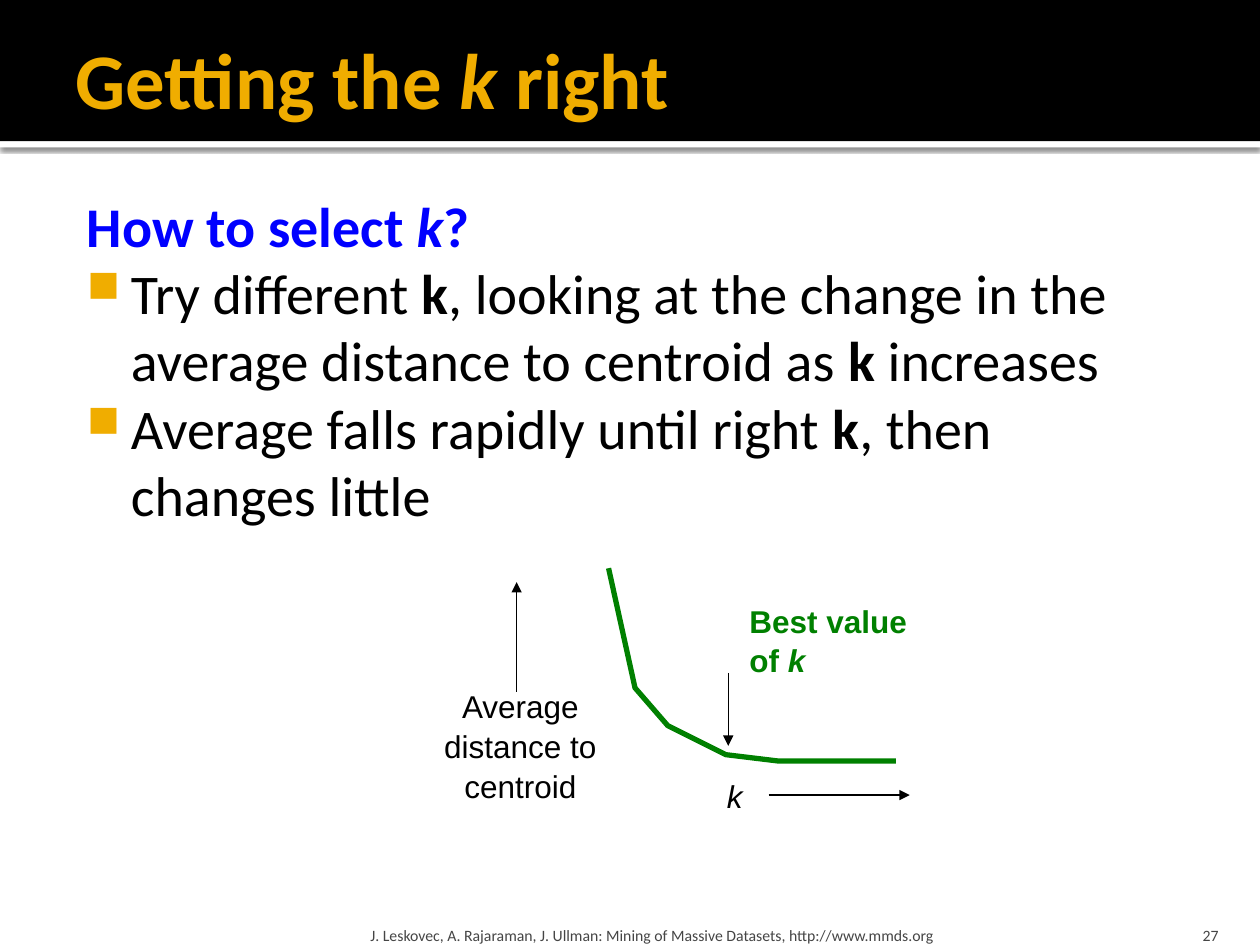
from dataclasses import dataclass

from lxml.etree import SubElement
from pptx import Presentation
from pptx.dml.color import RGBColor
from pptx.enum.shapes import MSO_CONNECTOR as Connector, MSO_SHAPE as Shape
from pptx.enum.text import MSO_ANCHOR as Anchor, MSO_AUTO_SIZE as AutoSize, PP_ALIGN as Align
from pptx.oxml.ns import qn
from pptx.util import Emu, Inches, Pt

COLUMNS, ROWS = 100, 75
UNIT = Inches(0.1)


@dataclass(frozen=True)
class Theme:
    black: str = "000000"
    white: str = "FFFFFF"
    gold: str = "F0AD00"
    blue: str = "0000FF"
    green: str = "008000"
    grey: str = "454545"
    text_font: str = "Calibri"
    figure_font: str = "Arial"
    title_size: float = 45
    body_size: float = 32
    figure_size: float = 18
    footer_size: float = 9


THEME = Theme()


@dataclass(frozen=True)
class Box:
    """A rectangle in grid columns and rows."""
    left: float
    top: float
    width: float
    height: float

    def inner(self, left, top, width, height):
        return Box(self.left + left, self.top + top, width, height)

    def point(self, column, row):
        return grid(self.left + column), grid(self.top + row)

    def lengths(self):
        return [grid(n) for n in (self.left, self.top, self.width, self.height)]


def grid(count):
    return Emu(round(count * UNIT))


def add_xml(parent, tag, **attributes):
    return SubElement(parent, qn(tag), {name: str(value) for name, value in attributes.items()})


def apply(target, formats):
    for name, value in formats.items():
        setattr(target, name, value)


def write(paragraph, text, font, size, color, emphasis="italic", bold=False):
    """Write runs, giving the emphasis to parts between asterisks."""
    for index, part in enumerate(text.split("*")):
        if not part:
            continue
        run = paragraph.add_run()
        run.text = part
        apply(run.font, {"name": font, "size": Pt(size), "bold": bold, "italic": False})
        run.font.color.rgb = RGBColor.from_string(color)
        if index % 2:
            setattr(run.font, emphasis, True)


def set_frame(frame, insets=(0.1, 0.05, 0.1, 0.05), anchor=Anchor.TOP, wrap=True):
    sides = ("margin_left", "margin_top", "margin_right", "margin_bottom")
    apply(frame, dict(zip(sides, map(Inches, insets))))
    apply(frame, {"vertical_anchor": anchor, "word_wrap": wrap, "auto_size": AutoSize.NONE})


def add_text(slide, box, lines, style, align=Align.LEFT, spacing=1.0, **frame_format):
    frame = slide.shapes.add_textbox(*box.lengths()).text_frame
    set_frame(frame, **frame_format)
    for index, line in enumerate(lines):
        paragraph = frame.paragraphs[0] if index == 0 else frame.add_paragraph()
        apply(paragraph, {"alignment": align, "line_spacing": spacing})
        write(paragraph, line, **style)
    return frame


def add_band(slide, box, color):
    band = slide.shapes.add_shape(Shape.RECTANGLE, *box.lengths())
    band.shadow.inherit = False
    band.fill.solid()
    band.fill.fore_color.rgb = RGBColor.from_string(color)
    band.line.fill.background()
    return band


def add_header(slide, box, text):
    stripe = add_band(slide, box.inner(0, box.height, box.width, 0.5), THEME.white)
    effects = stripe._element.spPr.find(qn("a:effectLst"))
    shadow = add_xml(effects, "a:outerShdw", blurRad=Pt(2.5), dist=Pt(0.8), dir=90 * 60000,
                     algn="tl", rotWithShape=0)
    add_xml(add_xml(shadow, "a:srgbClr", val=THEME.black), "a:alpha", val=60000)
    add_band(slide, box, THEME.black)

    title = slide.shapes.title
    slide.shapes._spTree.append(title._element)
    apply(title, dict(zip(("left", "top", "width", "height"),
                          box.inner(5, 0.8, 90, 10.8).lengths())))
    set_frame(title.text_frame, (0.1, 0.05, 0.05, 0.05), Anchor.MIDDLE)
    paragraph = title.text_frame.paragraphs[0]
    paragraph.alignment = Align.LEFT
    write(paragraph, text, THEME.text_font, THEME.title_size, THEME.gold, bold=True)


def add_body(slide, box, heading, bullets):
    style = {"font": THEME.text_font, "size": THEME.body_size}
    frame = add_text(slide, box, [heading], {**style, "color": THEME.blue, "bold": True},
                     insets=(0.06, 0.1, 0.1, 0.05))
    apply(frame.paragraphs[0]._p.get_or_add_pPr(), {"marL": Inches(0.13)} and {})
    frame.paragraphs[0]._p.get_or_add_pPr().set("marL", str(Inches(0.13)))
    for bullet in bullets:
        paragraph = frame.add_paragraph()
        properties = paragraph._p.get_or_add_pPr()
        properties.set("marL", str(Inches(0.48)))
        properties.set("indent", str(Inches(-0.35)))
        add_xml(add_xml(properties, "a:buClr"), "a:srgbClr", val=THEME.gold)
        add_xml(properties, "a:buSzPct", val=80000)
        add_xml(properties, "a:buChar", char="■")
        write(paragraph, bullet, color=THEME.black, emphasis="bold", **style)


def add_arrow(slide, start, end):
    arrow = slide.shapes.add_connector(Connector.STRAIGHT, *start, *end)
    arrow.line.width = Pt(0.75)
    arrow.line.color.rgb = RGBColor.from_string(THEME.black)
    add_xml(arrow.line._get_or_add_ln(), "a:tailEnd", type="triangle")
    add_xml(arrow._element.spPr, "a:effectLst")


def add_elbow_curve(slide, box):
    """Draw average distance against k, with labels and arrows."""
    style = {"font": THEME.figure_font, "size": THEME.figure_size, "color": THEME.black}
    label = {"wrap": False, "spacing": 1.05}
    add_text(slide, box.inner(22.5, 15.9, 3.3, 4), ["*k*"], style, **label)
    add_text(slide, box.inner(0, 8.8, 14.2, 10.1), ["Average", "distance to", "centroid"],
             style, Align.CENTER, **label)
    add_text(slide, box.inner(24.3, 2, 14.6, 7.1), ["Best value", "of *k*"],
             {**style, "color": THEME.green, "bold": True}, **label)

    for start, end in (((6.8, 9.8), (6.8, 1.1)),
                       ((26.8, 18), (38, 18)),
                       ((23.6, 8.3), (23.6, 14.1))):
        add_arrow(slide, box.point(*start), box.point(*end))

    points = [(14.1, 0), (16.2, 9.5), (18.8, 12.5), (23.4, 14.8), (27.5, 15.3), (36.9, 15.3)]
    first, *others = [box.point(*point) for point in points]
    builder = slide.shapes.build_freeform(*first)
    builder.add_line_segments(others, close=False)
    curve = builder.convert_to_shape()
    curve.shadow.inherit = False
    curve.fill.background()
    curve.line.width = Pt(3)
    curve.line.color.rgb = RGBColor.from_string(THEME.green)


def add_footer(slide, box, source, number):
    style = {"font": THEME.text_font, "size": THEME.footer_size, "color": THEME.grey}
    add_text(slide, box.inner(0, 0, 60.2, box.height), [source], style,
             insets=(0.05, 0.05, 0.05, 0), anchor=Anchor.BOTTOM)
    add_text(slide, box.inner(box.width - 8, 0, 8, box.height), [number], style, Align.RIGHT,
             insets=(0.1, 0.05, 0.1, 0), anchor=Anchor.BOTTOM)


def main():
    presentation = Presentation()
    apply(presentation, {"slide_width": grid(COLUMNS), "slide_height": grid(ROWS)})
    slide = presentation.slides.add_slide(presentation.slide_layouts[5])
    add_header(slide, Box(0, 0, COLUMNS, 11.2), "Getting the *k* right")
    add_body(slide, Box(5, 14.2, 90, 57.5), "How to select *k*?", [
        "Try different *k*, looking at the change in the average distance to centroid "
        "as *k* increases",
        "Average falls rapidly until right *k*, then changes little",
    ])
    add_elbow_curve(slide, Box(34.2, 45.1, 38.9, 19.9))
    add_footer(slide, Box(28.9, 72, 68.8, 3),
               "J. Leskovec, A. Rajaraman, J. Ullman: Mining of Massive Datasets, "
               "http://www.mmds.org", "27")
    presentation.save("out.pptx")


if __name__ == "__main__":
    main()
